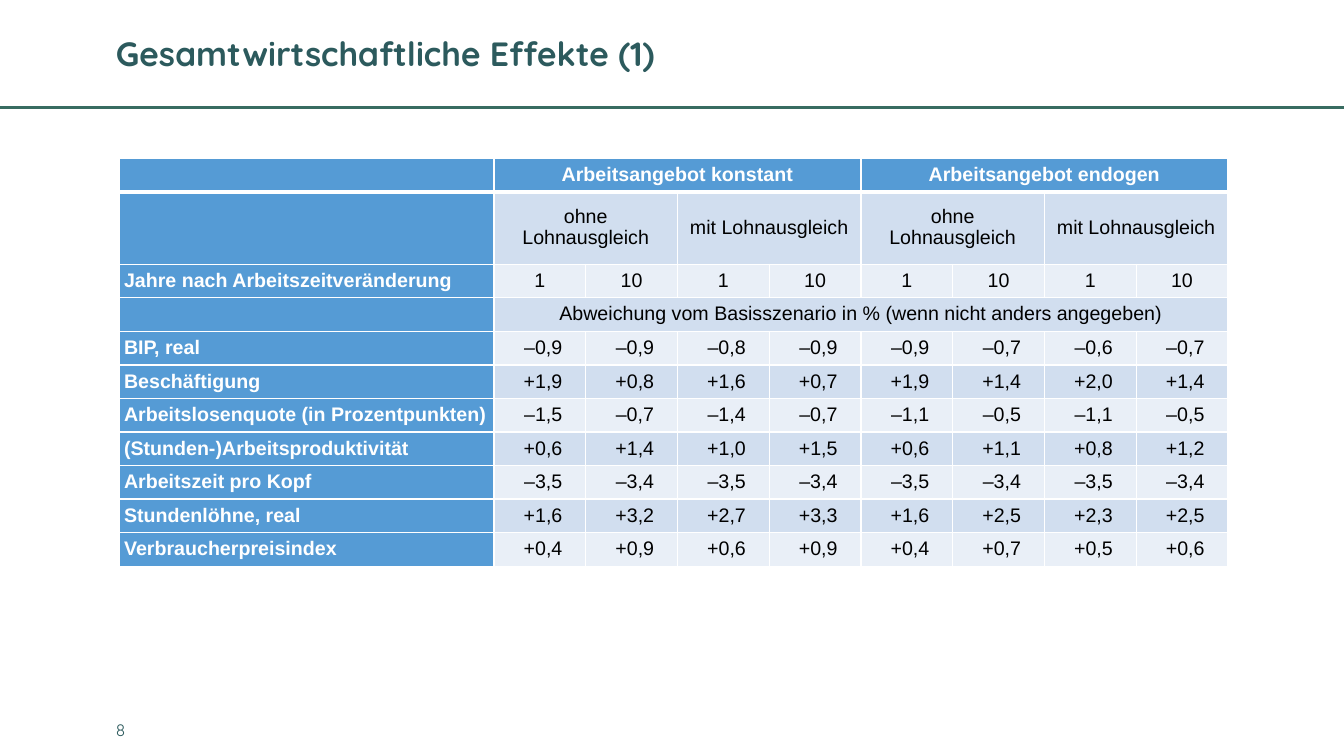
from lxml.etree import SubElement
from pptx import Presentation
from pptx.dml.color import RGBColor
from pptx.enum.shapes import MSO_CONNECTOR
from pptx.enum.text import MSO_ANCHOR, PP_ALIGN
from pptx.oxml.ns import qn
from pptx.util import Inches, Pt

WHITE = RGBColor(0xFF, 0xFF, 0xFF)
BLACK = RGBColor(0x00, 0x00, 0x00)
PETROL = RGBColor(0x2C, 0x5A, 0x5D)
RULE_GREEN = RGBColor(0x38, 0x6C, 0x61)
HEADER_BLUE = RGBColor(0x55, 0x9B, 0xD5)
BAND_DARK = RGBColor(0xD1, 0xDE, 0xEF)
BAND_LIGHT = RGBColor(0xE9, 0xEF, 0xF7)

SLIDE_WIDTH, SLIDE_HEIGHT = 13.33, 7.5
VALUE_COLUMNS = 8
LABEL_WIDTH = 3.72
WAGE_ROW, WAGE_ROW_HEIGHT = 1, 0.72
FIRST_VALUE_ROW = 4

# Label, then entries that share the value columns equally
EFFECTS = [
    ("", ["Arbeitsangebot konstant", "Arbeitsangebot endogen"]),
    ("", ["ohne Lohnausgleich", "mit Lohnausgleich"] * 2),
    ("Jahre nach Arbeitszeitveränderung", ["1", "10"] * 4),
    ("", ["Abweichung vom Basisszenario in % (wenn nicht anders angegeben)"]),
    ("BIP, real", "–0,9 –0,9 –0,8 –0,9 –0,9 –0,7 –0,6 –0,7".split()),
    ("Beschäftigung", "+1,9 +0,8 +1,6 +0,7 +1,9 +1,4 +2,0 +1,4".split()),
    ("Arbeitslosenquote (in Prozentpunkten)",
     "–1,5 –0,7 –1,4 –0,7 –1,1 –0,5 –1,1 –0,5".split()),
    ("(Stunden-)Arbeitsproduktivität",
     "+0,6 +1,4 +1,0 +1,5 +0,6 +1,1 +0,8 +1,2".split()),
    ("Arbeitszeit pro Kopf", "–3,5 –3,4 –3,5 –3,4 –3,5 –3,4 –3,5 –3,4".split()),
    ("Stundenlöhne, real", "+1,6 +3,2 +2,7 +3,3 +1,6 +2,5 +2,3 +2,5".split()),
    ("Verbraucherpreisindex", "+0,4 +0,9 +0,6 +0,9 +0,4 +0,7 +0,5 +0,6".split()),
]


def set_font(paragraph, name, size, color, bold=False):
    font = paragraph.font
    font.name, font.size, font.bold = name, Pt(size), bold
    font.color.rgb = color


def add_text(slide, box, text, size, bold=False, margins=(0, 0, 0, 0)):
    frame_box = slide.shapes.add_textbox(*map(Inches, box))
    frame = frame_box.text_frame
    frame.word_wrap = True
    frame.vertical_anchor = MSO_ANCHOR.MIDDLE
    (frame.margin_left, frame.margin_top,
     frame.margin_right, frame.margin_bottom) = map(Inches, margins)
    paragraph = frame.paragraphs[0]
    paragraph.text = text
    set_font(paragraph, "Quicksand", size, PETROL, bold)


def add_header_rule(slide, top):
    rule = slide.shapes.add_connector(
        MSO_CONNECTOR.STRAIGHT, 0, Inches(top), Inches(SLIDE_WIDTH), Inches(top))
    rule.line.color.rgb = RULE_GREEN
    rule.line.width = Pt(2.25)
    SubElement(rule._element.spPr, qn("a:effectLst"))


def add_borders(cell, top, bottom):
    properties = cell._tc.get_or_add_tcPr()
    for side, width in (("L", 1), ("R", 1), ("T", top), ("B", bottom)):
        border = SubElement(properties, qn(f"a:ln{side}"), w=str(Pt(width)))
        fill = SubElement(border, qn("a:solidFill"))
        SubElement(fill, qn("a:srgbClr"), val=str(WHITE))


def add_sign_tabs(paragraph):
    """Tab stops that align the sign and the decimal comma."""
    tabs = SubElement(paragraph._p.get_or_add_pPr(), qn("a:tabLst"))
    for position, alignment in ((0.12, "ctr"), (0.26, "dec")):
        SubElement(tabs, qn("a:tab"), pos=str(Inches(position)), algn=alignment)


def write_cell(cell, text, is_header, is_label=False, is_value=False):
    cell.vertical_anchor = MSO_ANCHOR.MIDDLE
    cell.margin_left = cell.margin_right = Inches(0.05)
    cell.margin_top = cell.margin_bottom = 0
    paragraph = cell.text_frame.paragraphs[0]
    paragraph.text = f"\t{text[0]}\t{text[1:]}" if is_value else text
    paragraph.alignment = PP_ALIGN.LEFT if is_label else PP_ALIGN.CENTER
    paragraph.line_spacing = Pt(15)
    paragraph.space_after = Pt(1)
    if is_value:
        add_sign_tabs(paragraph)
    set_font(paragraph, "Arial", 14, WHITE if is_header else BLACK, is_header)


def add_effects_table(slide, box):
    left, top, width, height = box
    table = slide.shapes.add_table(
        len(EFFECTS), VALUE_COLUMNS + 1, *map(Inches, box)).table
    for index, column in enumerate(table.columns):
        column.width = Inches(
            (width - LABEL_WIDTH) / VALUE_COLUMNS if index else LABEL_WIDTH)
    for index, row in enumerate(table.rows):
        row.height = Inches(
            WAGE_ROW_HEIGHT if index == WAGE_ROW
            else (height - WAGE_ROW_HEIGHT) / (len(EFFECTS) - 1))

    for row, (label, entries) in enumerate(EFFECTS):
        band = BAND_DARK if row % 2 else BAND_LIGHT
        for column in range(VALUE_COLUMNS + 1):
            cell = table.cell(row, column)
            add_borders(cell, 3 if row == 1 else 1, 3 if row == 0 else 1)
            cell.fill.solid()
            cell.fill.fore_color.rgb = (
                HEADER_BLUE if row == 0 or column == 0 else band)
        write_cell(table.cell(row, 0), label, is_header=True, is_label=True)
        span = VALUE_COLUMNS // len(entries)
        for index, entry in enumerate(entries):
            first = 1 + index * span
            cell = table.cell(row, first)
            if span > 1:
                cell.merge(table.cell(row, first + span - 1))
            write_cell(cell, entry, is_header=row == 0,
                       is_value=row >= FIRST_VALUE_ROW)


def main():
    presentation = Presentation()
    presentation.slide_width = Inches(SLIDE_WIDTH)
    presentation.slide_height = Inches(SLIDE_HEIGHT)
    slide = presentation.slides.add_slide(presentation.slide_layouts[6])
    add_header_rule(slide, 1.07)
    add_text(slide, (1.15, 0.08, 11.02, 0.9),
             "Gesamtwirtschaftliche Effekte (1)", 24, bold=True)
    add_effects_table(slide, (1.18, 1.57, 11, 4.05))
    add_text(slide, (1.15, 7.12, 3.1, 0.24), "8", 12,
             margins=(0, 0.05, 0.1, 0.05))
    presentation.save("out.pptx")


if __name__ == "__main__":
    main()
